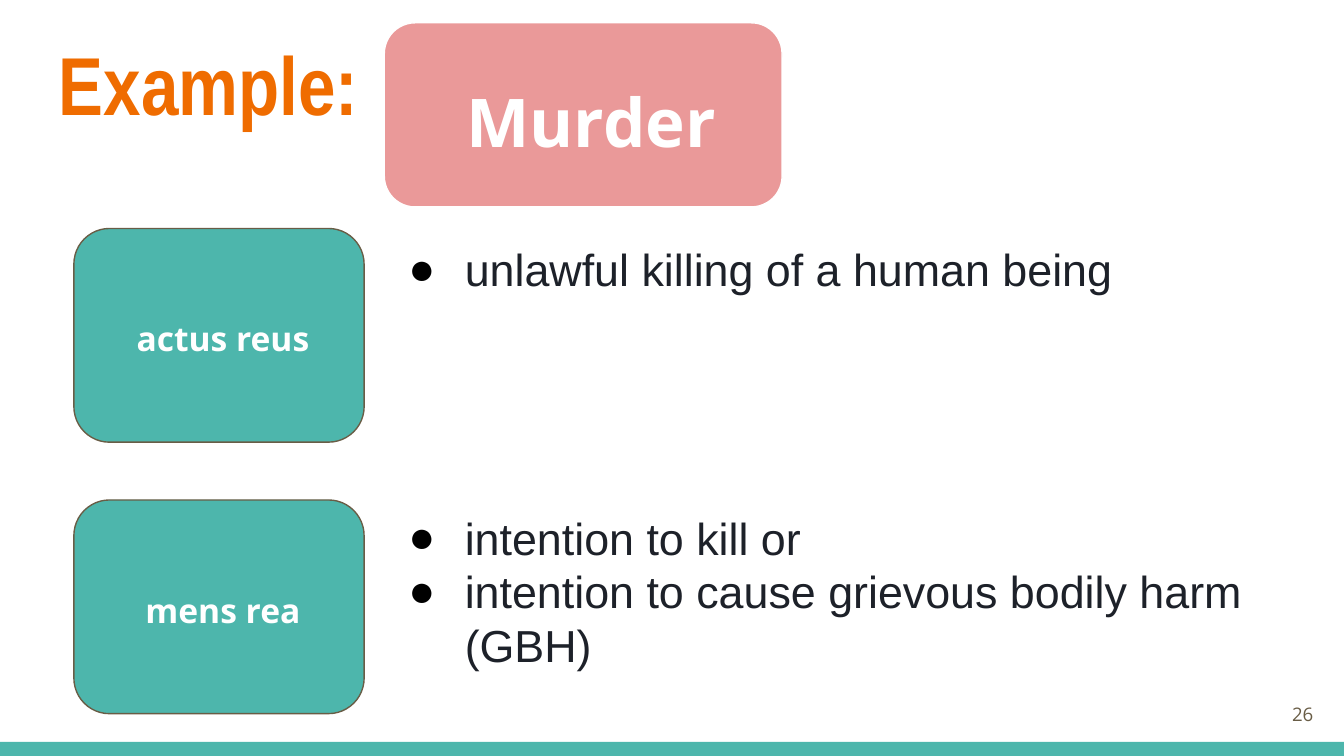
import lxml.etree
import pptx
import pptx.util
import pptx.dml.color
import pptx.enum.shapes
import pptx.enum.text
import pptx.oxml.ns
from dataclasses import dataclass

Inches = pptx.util.Inches
SHAPES = pptx.enum.shapes.MSO_SHAPE
ALIGN = pptx.enum.text.PP_ALIGN
ANCHOR = pptx.enum.text.MSO_ANCHOR


@dataclass(frozen=True)
class Theme:
    teal: str = "4DB6AC"
    rose: str = "EA9999"
    orange: str = "EF6C00"
    brown: str = "695D46"
    ink: str = "1D2129"
    white: str = "FFFFFF"
    bullet: str = "000000"
    heading_font: str = "Arial Narrow"
    body_font: str = "Arial"
    label_font: str = "Open Sans"
    title_size: int = 44
    crime_size: int = 36
    body_size: int = 24
    element_size: int = 18
    number_size: int = 10


theme = Theme()


def write(shape, lines, font, size, color, bold=False, align=ALIGN.LEFT, anchor=ANCHOR.TOP):
    """Fill a shape with paragraphs in one style."""
    frame = shape.text_frame
    frame.word_wrap = True
    frame.vertical_anchor = anchor
    frame.margin_left = frame.margin_right = Inches(0.1)
    frame.margin_top = frame.margin_bottom = Inches(0.1)
    frame.text = "\n".join(lines)
    for paragraph in frame.paragraphs:
        paragraph.alignment = align
        for run in paragraph.runs:
            run.font.name = font
            run.font.size = pptx.util.Pt(size)
            run.font.bold = bold
            run.font.color.rgb = pptx.dml.color.RGBColor.from_string(color)
    return frame


def block(kind, left, top, width, height, fill, line=None):
    """Add a filled preset shape, outlined if a line colour is given."""
    shape = slide.shapes.add_shape(kind, Inches(left), Inches(top), Inches(width), Inches(height))
    shape.shadow.inherit = False
    shape.fill.solid()
    shape.fill.fore_color.rgb = pptx.dml.color.RGBColor.from_string(fill)
    if line:
        shape.line.color.rgb = pptx.dml.color.RGBColor.from_string(line)
        shape.line.width = pptx.util.Pt(0.75)
    else:
        shape.line.fill.background()
    return shape


# A 16:9 slide
deck = pptx.Presentation()
deck.slide_width, deck.slide_height = Inches(10), Inches(10 * 9 / 16)
slide = deck.slides.add_slide(deck.slide_layouts[6])

# Footer band
block(SHAPES.RECTANGLE, 0, 5.52, 10, 0.11, theme.teal)

# Title
title = slide.shapes.add_textbox(Inches(0.34), Inches(0.15), Inches(9.32), Inches(0.77))
write(title, ["Example:"], theme.heading_font, theme.title_size, theme.orange, bold=True)

# Bulleted definitions, the second group level with the second element
points = [
    "unlawful killing of a human being",
    "intention to kill or",
    "intention to cause grievous bodily harm (GBH)",
]
definitions = slide.shapes.add_textbox(Inches(2.86), Inches(1.7), Inches(6.58), Inches(3.61))
frame = write(definitions, points, theme.body_font, theme.body_size, theme.ink)
frame.paragraphs[1].space_before = pptx.util.Pt(115)
for point in frame.paragraphs:
    properties = point._p.get_or_add_pPr()
    properties.set("marL", str(Inches(0.5)))
    properties.set("indent", str(Inches(-0.42)))
    bullet_color = lxml.etree.SubElement(properties, pptx.oxml.ns.qn("a:buClr"))
    lxml.etree.SubElement(bullet_color, pptx.oxml.ns.qn("a:srgbClr"), val=theme.bullet)
    lxml.etree.SubElement(properties, pptx.oxml.ns.qn("a:buFont"), typeface=theme.body_font)
    lxml.etree.SubElement(properties, pptx.oxml.ns.qn("a:buChar"), char="●")

# Page number
page_number = slide.shapes.add_textbox(Inches(9.27), Inches(5.1), Inches(0.6), Inches(0.43))
write(page_number, ["26"], theme.label_font, theme.number_size, theme.brown,
      align=ALIGN.RIGHT, anchor=ANCHOR.MIDDLE)

# Crime and its two elements: box, label, size, indent
crime = block(SHAPES.ROUNDED_RECTANGLE, 2.86, 0.17, 2.96, 1.37, theme.rose, theme.white)
labels = [(crime, "Murder", theme.crime_size, 0.12)]
for element, top in [("actus reus", 1.7), ("mens rea", 3.72)]:
    card = block(SHAPES.FLOWCHART_ALTERNATE_PROCESS, 0.55, top, 2.16, 1.59, theme.teal, theme.brown)
    labels.append((card, element, theme.element_size, 0.06))
for card, label, size, indent in labels:
    frame = write(card, [label], theme.label_font, size, theme.white, bold=True,
                  align=ALIGN.CENTER, anchor=ANCHOR.MIDDLE)
    frame.paragraphs[0].line_spacing = 1.15
    frame.paragraphs[0]._p.get_or_add_pPr().set("marL", str(Inches(indent)))

deck.save("out.pptx")
